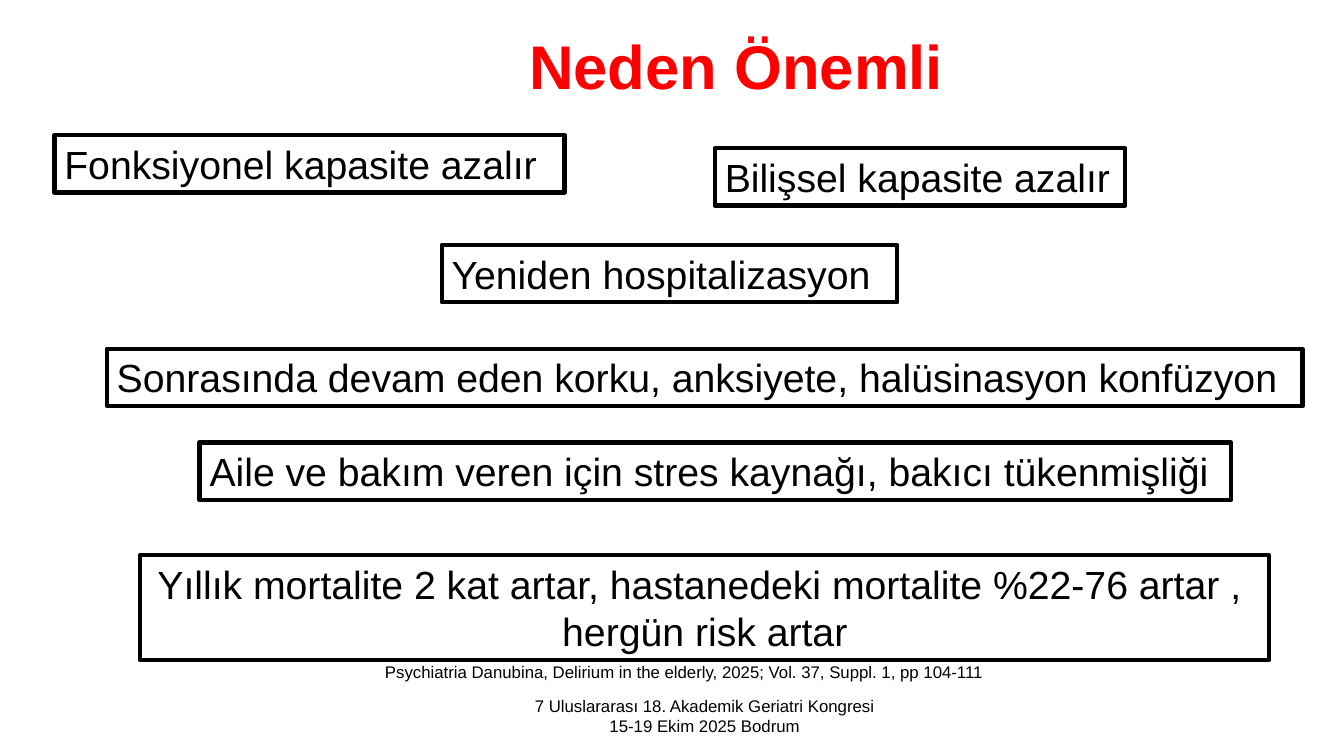
from pptx import Presentation
from pptx.dml.color import RGBColor
from pptx.enum.shapes import MSO_SHAPE
from pptx.enum.text import MSO_ANCHOR, PP_ALIGN
from pptx.util import Inches, Pt

RED = RGBColor(0xFF, 0x00, 0x00)
BLACK = RGBColor(0x00, 0x00, 0x00)
LEFT, CENTER = PP_ALIGN.LEFT, PP_ALIGN.CENTER
TOP = MSO_ANCHOR.TOP
RECTANGLE = MSO_SHAPE.RECTANGLE

TITLE_FONT = {"name": "Arial", "size": Pt(44), "bold": True}
BODY_FONT = {"name": "Arial", "size": Pt(28)}
SMALL_FONT = {"name": "Arial", "size": Pt(12)}

# Each consequence: box (left, top, width, height), lines, alignment
CONSEQUENCES = [
    ((0.54, 1.34, 5.06, 0.57), ["Fonksiyonel kapasite azalır"], LEFT),
    ((7.09, 1.47, 4.07, 0.57), ["Bilişsel kapasite azalır"], LEFT),
    ((4.38, 2.43, 4.52, 0.57), ["Yeniden hospitalizasyon"], LEFT),
    ((1.06, 3.46, 11.86, 0.57),
     ["Sonrasında devam eden korku, anksiyete, halüsinasyon konfüzyon"], LEFT),
    ((1.98, 4.39, 10.23, 0.57),
     ["Aile ve bakım veren için stres kaynağı, bakıcı tükenmişliği"], LEFT),
    ((1.39, 5.51, 11.2, 1.04),
     ["Yıllık mortalite 2 kat artar, hastanedeki mortalite %22-76 artar , ",
      "hergün risk artar"], CENTER),
]


def write_lines(shape, lines, font, color=BLACK, alignment=LEFT):
    frame = shape.text_frame
    frame.word_wrap = True
    frame.vertical_anchor = TOP
    for index, line in enumerate(lines):
        para = frame.paragraphs[0] if index == 0 else frame.add_paragraph()
        para.alignment = alignment
        span = para.add_run()
        span.text = line
        for attribute, value in font.items():
            setattr(span.font, attribute, value)
        span.font.color.rgb = color


def add_text(page, box, lines, font, color=BLACK, alignment=LEFT):
    shape = page.shapes.add_textbox(*map(Inches, box))
    write_lines(shape, lines, font, color, alignment)


def add_consequence(page, box, lines, alignment):
    shape = page.shapes.add_shape(RECTANGLE, *map(Inches, box))
    shape.shadow.inherit = False
    shape.fill.background()
    shape.line.color.rgb = BLACK
    shape.line.width = Pt(3)
    write_lines(shape, lines, BODY_FONT, alignment=alignment)


def main():
    deck = Presentation()
    deck.slide_width, deck.slide_height = Inches(13.33), Inches(7.5)
    page = deck.slides.add_slide(deck.slide_layouts[6])

    # Title
    add_text(page, (5.15, 0.23, 4.35, 1.58), ["Neden Önemli"], TITLE_FONT, RED)

    # Framed consequences
    for box, lines, alignment in CONSEQUENCES:
        add_consequence(page, box, lines, alignment)

    # Reference and congress footer
    add_text(page, (3.72, 6.52, 9.5, 0.3),
             ["Psychiatria Danubina, Delirium in the elderly, 2025; "
              "Vol. 37, Suppl. 1, pp 104-111"], SMALL_FONT)
    add_text(page, (5.19, 6.85, 3.6, 0.5),
             ["7 Uluslararası 18. Akademik Geriatri Kongresi",
              "15-19 Ekim 2025 Bodrum"], SMALL_FONT, alignment=CENTER)

    deck.save("out.pptx")


if __name__ == "__main__":
    main()
